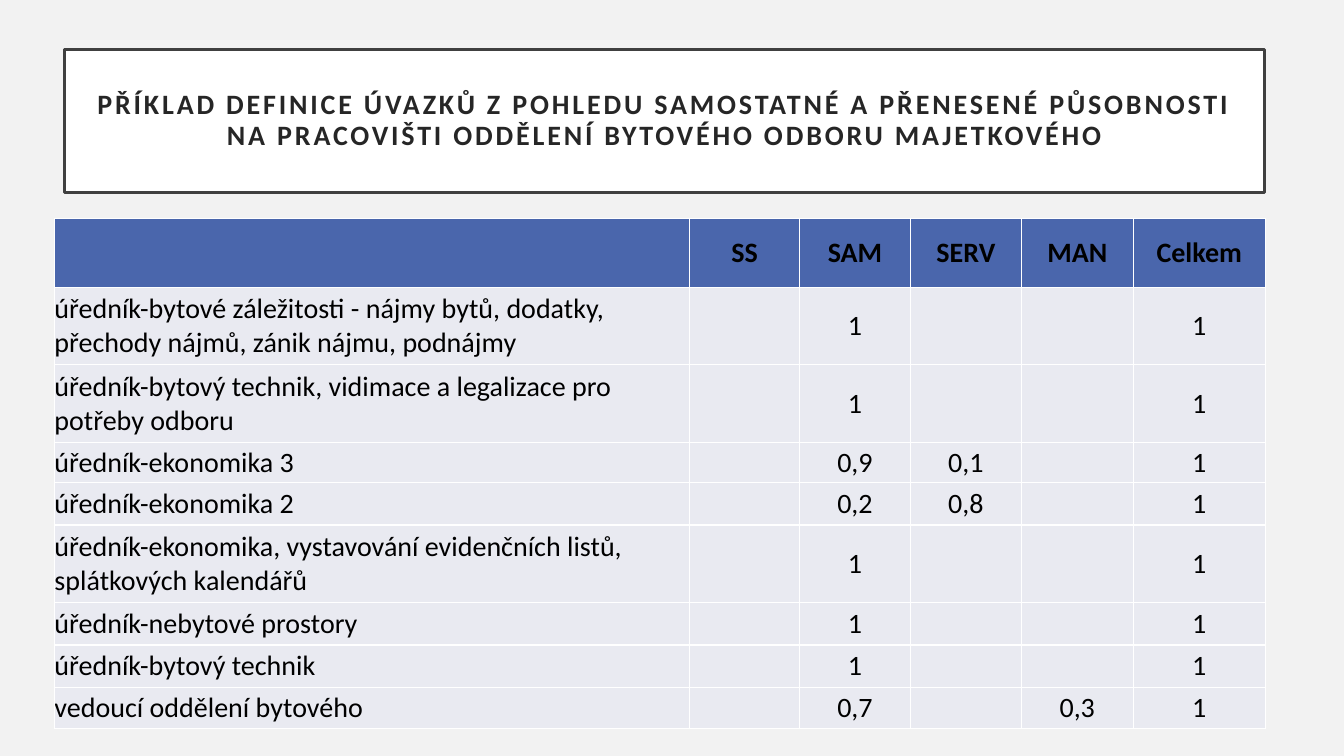
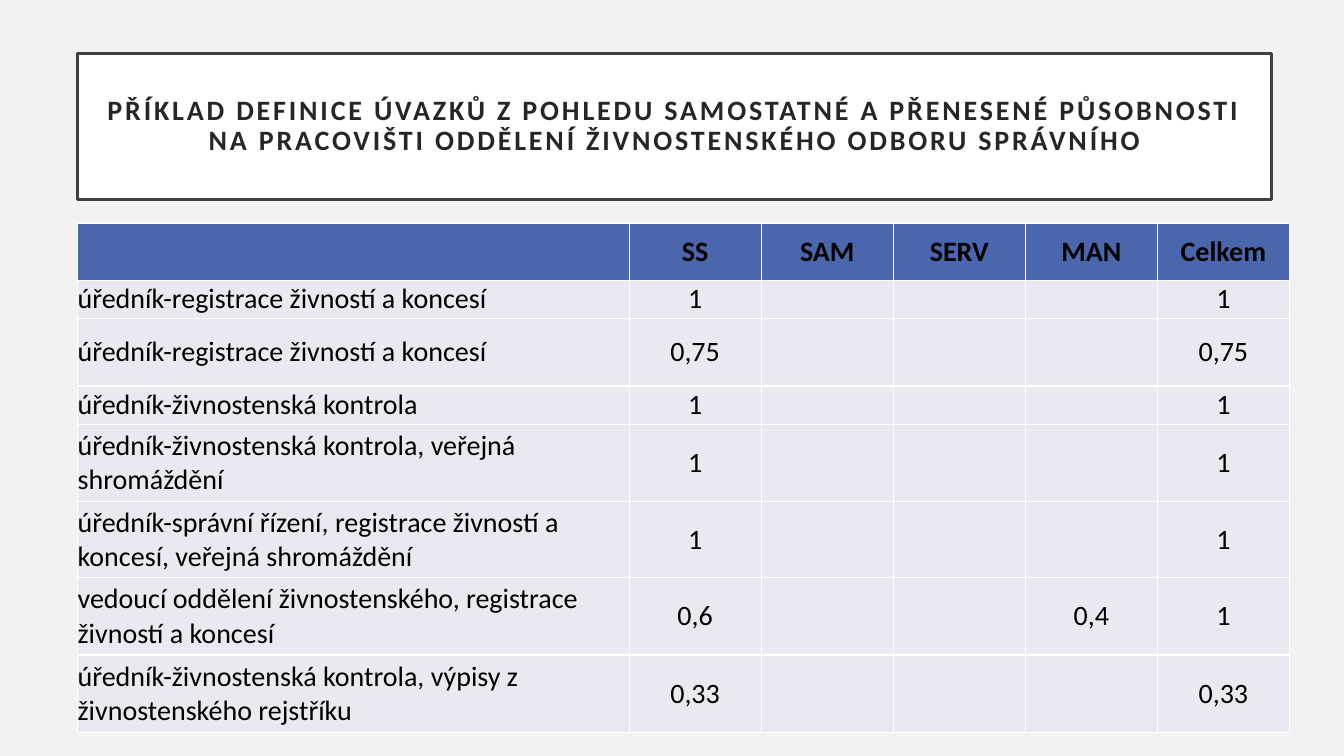
from dataclasses import dataclass

from lxml import etree
from pptx import Presentation
from pptx.dml.color import RGBColor
from pptx.enum.text import MSO_ANCHOR, MSO_AUTO_SIZE, PP_ALIGN
from pptx.oxml.ns import qn
from pptx.util import Emu, Pt

CENTER, LEFT = PP_ALIGN.CENTER, PP_ALIGN.LEFT
MIDDLE = MSO_ANCHOR.MIDDLE
NO_AUTOFIT = MSO_AUTO_SIZE.NONE
TITLE_ONLY_LAYOUT = 5
EMU_PER_PX = 9144


@dataclass(frozen=True)
class Theme:
    font: str = "Calibri"
    text_size: int = 20
    title_spacing: int = 2
    title_margin: int = 20
    title_line_width: float = 2.5
    cell_line_width: int = 1
    background: str = "F2F2F2"
    title_fill: str = "FFFFFF"
    title_line: str = "404040"
    title_text: str = "262626"
    header_fill: str = "4A66AC"
    body_fill: str = "E9EAF1"
    cell_line: str = "FFFFFF"
    cell_text: str = "000000"


@dataclass(frozen=True)
class Box:
    left: int
    top: int
    width: int
    height: int


@dataclass(frozen=True)
class Job:
    """One table row; a value left empty gives an empty cell."""
    height: int
    name: str
    ss: str = ""
    sam: str = ""
    serv: str = ""
    man: str = ""
    total: str = "1"

    def texts(self) -> tuple[str, ...]:
        return self.name, self.ss, self.sam, self.serv, self.man, self.total


@dataclass(frozen=True)
class Workplace:
    title: str
    title_box: Box
    table_left: int
    table_top: int
    column_widths: tuple[int, ...]
    header_height: int
    jobs: tuple[Job, ...]


THEME = Theme()
TITLE_START = "PŘÍKLAD DEFINICE ÚVAZKŮ Z POHLEDU SAMOSTATNÉ A PŘENESENÉ PŮSOBNOSTI NA PRACOVIŠTI ODDĚLENÍ "

WORKPLACES = (
    Workplace(
        "BYTOVÉHO ODBORU MAJETKOVÉHO",
        Box(64, 49, 1190, 142),
        54, 217, (630, 109, 110, 110, 111, 131), 68,
        (
            Job(77, "úředník-bytové záležitosti - nájmy bytů, dodatky, přechody nájmů, zánik nájmu, podnájmy", sam="1"),
            Job(77, "úředník-bytový technik, vidimace a legalizace pro potřeby odboru", sam="1"),
            Job(40, "úředník-ekonomika 3", sam="0,9", serv="0,1"),
            Job(42, "úředník-ekonomika 2", sam="0,2", serv="0,8"),
            Job(77, "úředník-ekonomika, vystavování evidenčních listů, splátkových kalendářů", sam="1"),
            Job(42, "úředník-nebytové prostory", sam="1"),
            Job(42, "úředník-bytový technik", sam="1"),
            Job(41, "vedoucí oddělení bytového", sam="0,7", man="0,3"),
        ),
    ),
    Workplace(
        "ŽIVNOSTENSKÉHO ODBORU SPRÁVNÍHO",
        Box(77, 53, 1184, 145),
        77, 222, (547,) + (131,) * 5, 56,
        (
            Job(38, "úředník-registrace živností a koncesí", ss="1"),
            Job(67, "úředník-registrace živností a koncesí", ss="0,75", total="0,75"),
            Job(38, "úředník-živnostenská kontrola", ss="1"),
            Job(77, "úředník-živnostenská kontrola, veřejná shromáždění", ss="1"),
            Job(75, "úředník-správní řízení, registrace živností a koncesí, veřejná shromáždění", ss="1"),
            Job(77, "vedoucí oddělení živnostenského, registrace živností a koncesí", ss="0,6", man="0,4"),
            Job(77, "úředník-živnostenská kontrola, výpisy z živnostenského rejstříku", ss="0,33", total="0,33"),
        ),
    ),
)


def px(length: int) -> Emu:
    return Emu(length * EMU_PER_PX)


def color(value: str) -> RGBColor:
    return RGBColor.from_string(value)


def set_margins(target, margin: int) -> None:
    target.margin_left = target.margin_right = px(margin)
    target.margin_top = target.margin_bottom = px(margin)


def format_paragraph(paragraph, text_color: str, bold: bool, alignment) -> None:
    paragraph.alignment = alignment
    font = paragraph.font
    font.name = THEME.font
    font.size = Pt(THEME.text_size)
    font.bold = bold
    font.color.rgb = color(text_color)


def style_master(master) -> None:
    """Set the background and the title letter spacing for all slides."""
    fill = master.background.fill
    fill.solid()
    fill.fore_color.rgb = color(THEME.background)
    title_style = next(master.element.iter(qn("p:titleStyle")))
    properties = next(title_style.iter(qn("a:defRPr")))
    properties.set("spc", str(THEME.title_spacing * 100))


def fill_title(title, text: str, box: Box) -> None:
    title.left, title.top = px(box.left), px(box.top)
    title.width, title.height = px(box.width), px(box.height)
    title.fill.solid()
    title.fill.fore_color.rgb = color(THEME.title_fill)
    title.line.color.rgb = color(THEME.title_line)
    title.line.width = Pt(THEME.title_line_width)
    frame = title.text_frame
    frame.text = text
    frame.word_wrap = True
    frame.auto_size = NO_AUTOFIT
    frame.vertical_anchor = MIDDLE
    set_margins(frame, THEME.title_margin)
    paragraph = frame.paragraphs[0]
    paragraph.line_spacing = 0.9
    format_paragraph(paragraph, THEME.title_text, True, CENTER)


def add_borders(cell) -> None:
    properties = cell._tc.get_or_add_tcPr()
    for side in ("lnL", "lnR", "lnT", "lnB"):
        line = etree.SubElement(properties, qn(f"a:{side}"), w=str(Pt(THEME.cell_line_width)))
        solid = etree.SubElement(line, qn("a:solidFill"))
        etree.SubElement(solid, qn("a:srgbClr"), val=THEME.cell_line)


def fill_cell(cell, text: str, is_header: bool, alignment) -> None:
    add_borders(cell)
    cell.fill.solid()
    cell.fill.fore_color.rgb = color(THEME.header_fill if is_header else THEME.body_fill)
    cell.vertical_anchor = MIDDLE
    set_margins(cell, 0)
    cell.text = text
    format_paragraph(cell.text_frame.paragraphs[0], THEME.cell_text, is_header, alignment)


def add_job_table(slide, workplace: Workplace) -> None:
    header = Job(workplace.header_height, "", "SS", "SAM", "SERV", "MAN", "Celkem")
    rows = (header, *workplace.jobs)
    widths = workplace.column_widths
    table = slide.shapes.add_table(
        len(rows), len(widths),
        px(workplace.table_left), px(workplace.table_top),
        px(sum(widths)), px(sum(row.height for row in rows)),
    ).table
    table.first_row = table.horz_banding = False
    for column, width in zip(table.columns, widths):
        column.width = px(width)
    for row_index, row in enumerate(rows):
        table.rows[row_index].height = px(row.height)
        for column_index, text in enumerate(row.texts()):
            alignment = CENTER if column_index else LEFT
            fill_cell(table.cell(row_index, column_index), text, row is header, alignment)


def main() -> None:
    presentation = Presentation()
    presentation.slide_width, presentation.slide_height = px(1333), px(750)
    style_master(presentation.slide_master)
    layout = presentation.slide_layouts[TITLE_ONLY_LAYOUT]
    for workplace in WORKPLACES:
        slide = presentation.slides.add_slide(layout)
        fill_title(slide.shapes.title, TITLE_START + workplace.title, workplace.title_box)
        add_job_table(slide, workplace)
    presentation.save("out.pptx")


if __name__ == "__main__":
    main()
